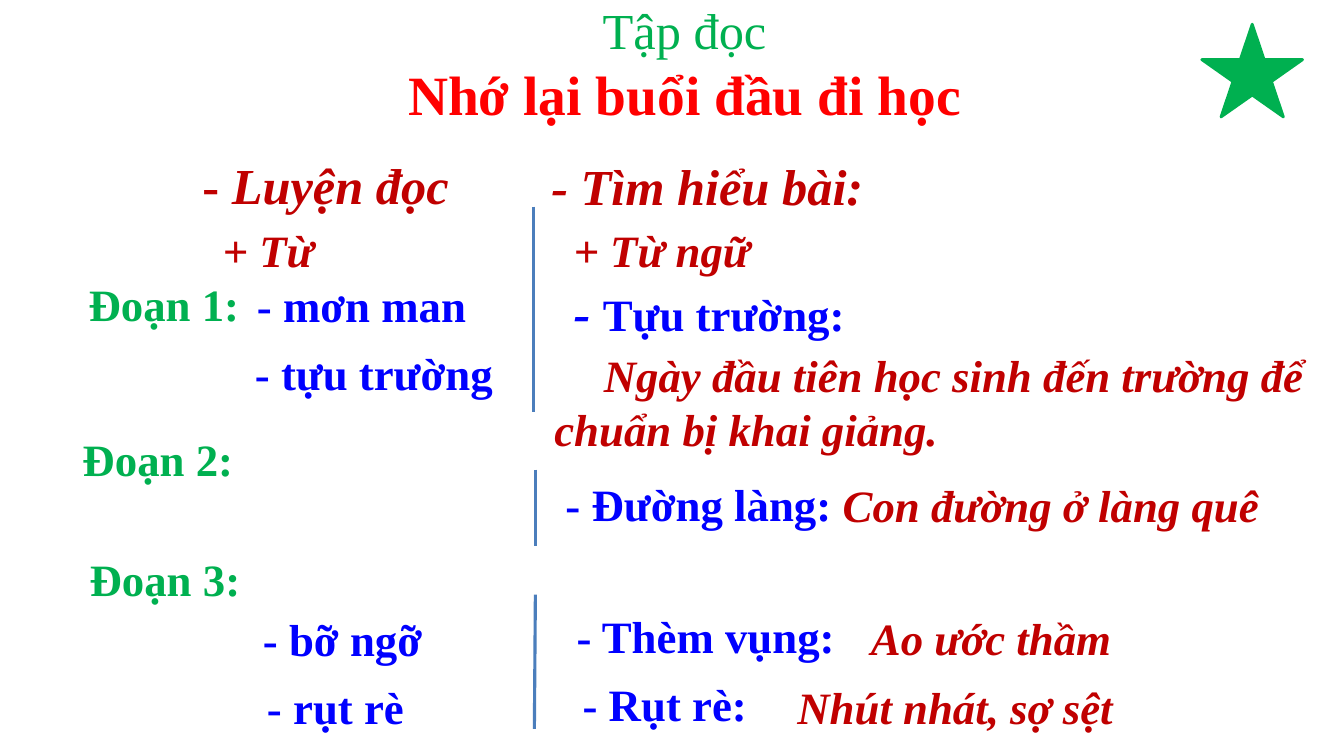
from lxml import etree
from pptx import Presentation
from pptx.dml.color import RGBColor
from pptx.enum import shapes, text
from pptx.oxml.ns import qn
from pptx.util import Inches, Pt

FONT = "Times New Roman"
GREEN, RED, DARK_RED, BLUE, RULE = "00B050", "FF0000", "C00000", "0000FF", "4B7EBC"


def color(value):
    return RGBColor.from_string(value)


def add_run(paragraph, content, size, hue, bold=True, italic=False):
    run = paragraph.add_run()
    run.text = content
    font = run.font
    font.name, font.size, font.bold, font.italic = FONT, Pt(size), bold, italic
    font.color.rgb = color(hue)


def add_box(slide, left, top, width, height):
    frame = slide.shapes.add_textbox(
        Inches(left), Inches(top), Inches(width), Inches(height)).text_frame
    frame.word_wrap = True
    return frame


def add_label(slide, left, top, width, content, hue, italic=False, size=32):
    paragraph = add_box(slide, left, top, width, size / 50).paragraphs[0]
    add_run(paragraph, content, size, hue, italic=italic)
    return paragraph


def add_divider(slide, x1, y1, x2, y2):
    line = slide.shapes.add_connector(
        shapes.MSO_CONNECTOR.STRAIGHT, Inches(x1), Inches(y1), Inches(x2), Inches(y2))
    line.line.color.rgb = color(RULE)
    line.line.width = Pt(2.25)
    etree.SubElement(line._element.spPr, qn("a:effectLst"))


def add_title(slide):
    frame = add_box(slide, 2.29, 0, 9, 1.25)
    frame.vertical_anchor = text.MSO_ANCHOR.MIDDLE
    subject, lesson = frame.paragraphs[0], frame.add_paragraph()
    add_run(subject, "Tập đọc", 36, GREEN, bold=False)
    add_run(lesson, "Nhớ lại buổi đầu đi học", 39.6, RED)
    for paragraph in (subject, lesson):
        paragraph.alignment = text.PP_ALIGN.CENTER


def add_star(slide):
    star = slide.shapes.add_shape(
        shapes.MSO_SHAPE.STAR_5_POINT, Inches(11.92), Inches(0.24), Inches(1), Inches(0.92))
    star.shadow.inherit = False
    star.fill.solid()
    star.fill.fore_color.rgb = color(GREEN)
    star.line.color.rgb = color(GREEN)
    star.line.width = Pt(2)


def main():
    presentation = Presentation()
    presentation.slide_width, presentation.slide_height = Inches(13.33), Inches(7.5)
    slide = presentation.slides.add_slide(presentation.slide_layouts[6])
    add_title(slide)

    # Column headings
    reading = add_box(slide, 1.91, 1.48, 2.88, 0.71).paragraphs[0]
    add_run(reading, "- ", 36, DARK_RED)
    add_run(reading, "Luyện đọc", 36, DARK_RED, italic=True)
    add_label(slide, 5.37, 1.49, 4.5, "- Tìm hiểu bài:", DARK_RED, True, 36)
    add_label(slide, 2.11, 2.16, 1.46, "+ Từ", DARK_RED, True)
    add_label(slide, 5.59, 2.16, 2.67, "+ Từ ngữ", DARK_RED, True)

    # Passage numbers
    for left, top, content in ((0.78, 2.7, "Đoạn 1:"), (0.72, 4.23, "Đoạn 2:"),
                               (0.79, 5.42, "Đoạn 3:")):
        add_label(slide, left, top, 2.2, content, GREEN)

    # Words to practise and words to explain
    for left, top, width, content in (
            (2.45, 2.71, 2.8, "- mơn man"), (2.43, 3.38, 2.8, "- tựu trường"),
            (2.51, 6.02, 2.5, "- bỡ ngỡ"), (2.55, 6.69, 2.5, "- rụt rè"),
            (5.51, 4.68, 3.3, "- Đường làng:"), (5.62, 5.99, 3.3, "- Thèm vụng:"),
            (5.68, 6.66, 2.3, "- Rụt rè:")):
        add_label(slide, left, top, width, content, BLUE)
    school_start = add_label(slide, 5.59, 2.74, 3.2, "- ", BLUE, True, 36)
    add_run(school_start, "Tựu trường:", 32, BLUE)

    # Meanings
    for left, top, width, content in (
            (8.26, 4.69, 5, "Con đường ở làng quê"), (8.54, 6.01, 4.66, "Ao ước thầm"),
            (7.81, 6.69, 3.67, "Nhút nhát, sợ sệt")):
        add_label(slide, left, top, width, content, DARK_RED, True)
    meaning = add_box(slide, 5.4, 3.4, 7.9, 1.18).paragraphs[0]
    add_run(meaning, "Ngày đầu tiên học sinh đến trường để chuẩn bị khai giảng.",
            32, DARK_RED, italic=True)
    meaning._p.get_or_add_pPr().set("indent", str(Inches(0.49)))

    # Column dividers and star
    add_divider(slide, 5.29, 2.05, 5.29, 4.09)
    add_divider(slide, 5.31, 4.66, 5.31, 5.42)
    add_divider(slide, 5.31, 5.9, 5.3, 7.23)
    add_star(slide)
    presentation.save("out.pptx")


if __name__ == "__main__":
    main()
